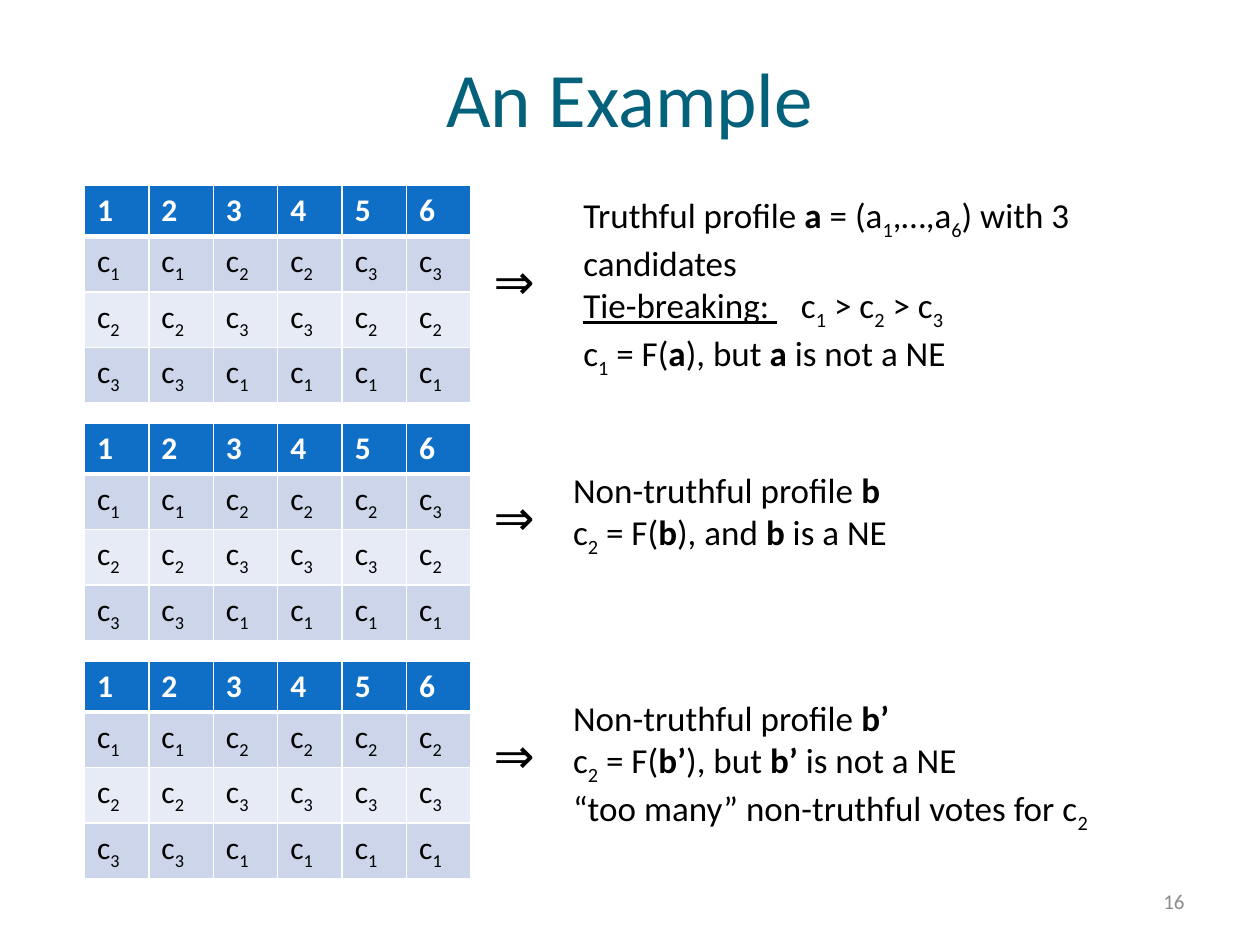
"""Build a slide comparing three voting profiles and their outcomes."""
import dataclasses

import pptx
import pptx.dml.color
import pptx.enum.text
import pptx.oxml.ns
import pptx.util
from lxml import etree

Pt = pptx.util.Pt
Align = pptx.enum.text.PP_ALIGN
Anchor = pptx.enum.text.MSO_ANCHOR


@dataclasses.dataclass(frozen=True)
class Theme:
    """Colours, font and type sizes of the slide."""
    font: str = "Calibri"
    title: str = "04617B"
    text: str = "000000"
    muted: str = "8C8C8C"
    white: str = "FFFFFF"
    header: str = "0F6FC6"
    bands: tuple = ("CCD5EA", "E7EBF5")
    title_size: int = 44
    arrow_size: int = 28
    body_size: int = 20
    table_size: int = 18
    number_size: int = 12


THEME = Theme()
TABLE_LEFT, TABLE_TOP, TABLE_PITCH = 48.24, 106, 136
COLUMN_WIDTH, ROW_HEIGHT, TABLE_HEIGHT = 36.85, 25.2, 115.2
ARROW_LEFT, NOTE_WIDTH = 275, 334.8

PROFILES = [
    {"votes": ["112233", "223322", "331111"], "arrow_top": 139.7,
     "note_box": (326.2, 107.3, NOTE_WIDTH, 128.2),
     "note": ["Truthful profile |*a |= (a|_1|,…,a|_6|) with 3 candidates",
              "~Tie-breaking: |   c|_1| > c|_2| > c|_3",
              "c|_1| = F(|*a|), but |*a| is not a NE"]},
    {"votes": ["112223", "223332", "331111"], "arrow_top": 274.3,
     "note_box": (320.4, 264.2, NOTE_WIDTH, 79.9),
     "note": ["Non-truthful profile |*b",
              "c|_2| = F(|*b|), and |*b| is a NE"]},
    {"votes": ["112222", "223333", "331111"], "arrow_top": 410.4,
     "note_box": (320.4, 394.6, NOTE_WIDTH, 104.4),
     "note": ["Non-truthful profile |*b’",
              "c|_2| = F(|*b’|), but |*b’| is not a NE",
              "“too many” non-truthful votes for c|_2"]},
]


def rgb(value):
    """Return the colour object for a hexadecimal string."""
    return pptx.dml.color.RGBColor.from_string(value)


def write_text(text_frame, lines, size, color=THEME.text, bold=False,
               align=Align.LEFT, anchor=Anchor.TOP):
    """Write lines of runs split by |, where _ is subscript, * bold, ~ underlined."""
    text_frame.word_wrap = True
    text_frame.vertical_anchor = anchor
    for index, line in enumerate(lines):
        paragraph = text_frame.add_paragraph() if index else text_frame.paragraphs[0]
        paragraph.alignment = align
        for piece in line.split("|"):
            mark = piece[0] if piece[0] in "_*~" else ""
            run = paragraph.add_run()
            run.text = piece[len(mark):]
            run.font.name = THEME.font
            run.font.size = Pt(size)
            run.font.color.rgb = rgb(color)
            run.font.bold = bold or mark == "*"
            if mark == "~":
                run.font.underline = True
            if mark == "_":
                run._r.get_or_add_rPr().set("baseline", "-25000")


def add_text(slide, box, lines, size, **text_format):
    """Add a text box at the given left, top, width and height."""
    shape = slide.shapes.add_textbox(*map(Pt, box))
    write_text(shape.text_frame, lines, size, **text_format)


def add_title(slide, text):
    """Place and format the title placeholder."""
    title = slide.shapes.title
    title.left, title.top, title.width, title.height = map(Pt, (36, 10, 648, 90))
    write_text(title.text_frame, [text], THEME.title_size, color=THEME.title,
               align=Align.CENTER, anchor=Anchor.MIDDLE)


def set_borders(cell, top, bottom):
    """Give a cell white borders with the given top and bottom widths."""
    properties = cell._tc.get_or_add_tcPr()
    for side, width in {"L": 1, "R": 1, "T": top, "B": bottom}.items():
        line = etree.SubElement(properties, pptx.oxml.ns.qn(f"a:ln{side}"), w=str(Pt(width)))
        fill = etree.SubElement(line, pptx.oxml.ns.qn("a:solidFill"))
        etree.SubElement(fill, pptx.oxml.ns.qn("a:srgbClr"), val=THEME.white)


def add_votes_table(slide, top, votes):
    """Add a table with one column per voter and candidates ranked downwards."""
    voters = len(votes[0])
    frame = slide.shapes.add_table(len(votes) + 1, voters, Pt(TABLE_LEFT), Pt(top),
                                   Pt(COLUMN_WIDTH * voters), Pt(TABLE_HEIGHT))
    table = frame.table
    for column in table.columns:
        column.width = Pt(COLUMN_WIDTH)
    header = [str(voter + 1) for voter in range(voters)]
    rows = [header] + [[f"c|_{candidate}" for candidate in rank] for rank in votes]
    for row_index, row in enumerate(rows):
        table.rows[row_index].height = Pt(ROW_HEIGHT)
        is_header = row_index == 0
        for column_index, text in enumerate(row):
            cell = table.cell(row_index, column_index)
            set_borders(cell, top=3 if row_index == 1 else 1, bottom=3 if is_header else 1)
            cell.fill.solid()
            cell.fill.fore_color.rgb = rgb(
                THEME.header if is_header else THEME.bands[(row_index - 1) % 2])
            write_text(cell.text_frame, [text], THEME.table_size, bold=is_header,
                       color=THEME.white if is_header else THEME.text)
    frame.height = Pt(TABLE_HEIGHT)


def main():
    """Build and save the presentation."""
    presentation = pptx.Presentation()
    presentation.slide_width, presentation.slide_height = Pt(720), Pt(540)
    slide = presentation.slides.add_slide(presentation.slide_layouts[5])
    add_title(slide, "An Example")
    for index, profile in enumerate(PROFILES):
        add_votes_table(slide, TABLE_TOP + index * TABLE_PITCH, profile["votes"])
        add_text(slide, (ARROW_LEFT, profile["arrow_top"], 79.2, 41), ["⇒"], THEME.arrow_size)
        add_text(slide, profile["note_box"], profile["note"], THEME.body_size)
    add_text(slide, (516, 500.5, 168, 28.75), ["16"], THEME.number_size,
             color=THEME.muted, align=Align.RIGHT, anchor=Anchor.MIDDLE)
    presentation.save("out.pptx")


if __name__ == "__main__":
    main()
